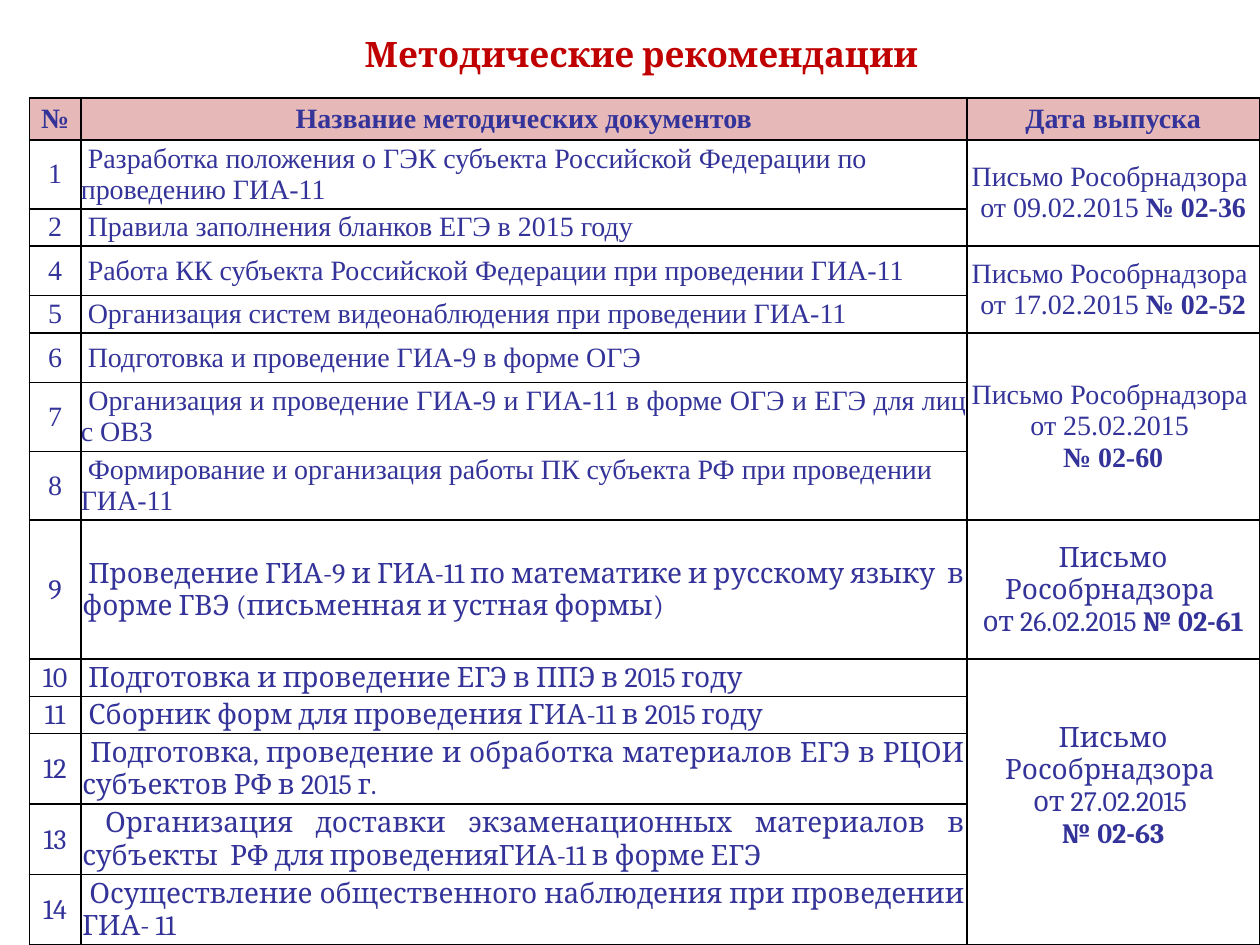
from dataclasses import dataclass

from lxml import etree
from pptx import Presentation
from pptx.dml.color import RGBColor
from pptx.enum.text import MSO_ANCHOR, MSO_AUTO_SIZE, PP_ALIGN
from pptx.oxml.ns import qn
from pptx.util import Cm, Pt

LEFT, CENTER, JUSTIFY = PP_ALIGN.LEFT, PP_ALIGN.CENTER, PP_ALIGN.JUSTIFY
MIDDLE = MSO_ANCHOR.MIDDLE
GROW = MSO_AUTO_SIZE.SHAPE_TO_FIT_TEXT
BLANK = 6


@dataclass(frozen=True)
class Theme:
    title_color: str = "C00000"
    text_color: str = "333399"
    header_fill: str = "E6B9B8"
    border: str = "000000"
    title_size: int = 20
    text_size: int = 16
    title_font: str = "Cambria"
    table_font: str = "Times New Roman"


def write(tf, text, *, font, size, color, bold=False, align=LEFT,
          line_spacing=None, space_after=None):
    """One paragraph per line; **marks** switch bold on and off."""
    for i, line in enumerate(text.split("\n")):
        p = tf.paragraphs[0] if i == 0 else tf.add_paragraph()
        p.alignment = align
        p.line_spacing = line_spacing
        p.space_after = space_after
        for j, part in enumerate(line.split("**")):
            if not part:
                continue
            r = p.add_run()
            r.text = part
            r.font.name, r.font.size = font, Pt(size)
            r.font.bold = bold or j % 2 == 1
            r.font.color.rgb = RGBColor.from_string(color)


def add_text_shadow(r):
    effects = etree.Element(qn("a:effectLst"))
    shadow = etree.SubElement(effects, qn("a:outerShdw"), blurRad="38100",
                              dist="38100", dir="2700000", algn="tl")
    color = etree.SubElement(shadow, qn("a:srgbClr"), val="000000")
    etree.SubElement(color, qn("a:alpha"), val="43000")
    r.font.fill._xPr.find(qn("a:solidFill")).addnext(effects)


def add_borders(cell, color):
    tc_pr = cell._tc.get_or_add_tcPr()
    for side in ("lnL", "lnR", "lnT", "lnB"):
        ln = etree.SubElement(tc_pr, qn(f"a:{side}"), w=str(Pt(1)))
        fill = etree.SubElement(ln, qn("a:solidFill"))
        etree.SubElement(fill, qn("a:srgbClr"), val=color)


class Deck:
    def __init__(self, prs, theme):
        self.theme = theme
        self.s = prs.slides.add_slide(prs.slide_layouts[BLANK])

    def title(self, text, x, y, w, h):
        t = self.theme
        sp = self.s.shapes.add_textbox(Cm(x), Cm(y), Cm(w), Cm(h))
        tf = sp.text_frame
        tf.word_wrap = True
        tf.auto_size = GROW
        write(tf, text, font=t.title_font, size=t.title_size, color=t.title_color,
              bold=True, align=CENTER, line_spacing=1.15, space_after=Pt(10))
        add_text_shadow(tf.paragraphs[0].runs[0])

    def table(self, x, y, widths, heights):
        frame = self.s.shapes.add_table(len(heights), len(widths), Cm(x), Cm(y),
                                        Cm(sum(widths)), Cm(sum(heights)))
        table = frame.table
        table.first_row = table.horz_banding = False
        for column, width in zip(table.columns, widths):
            column.width = Cm(width)
        for row, height in zip(table.rows, heights):
            row.height = Cm(height)
        for cell in table.iter_cells():
            add_borders(cell, self.theme.border)
            cell.fill.background()
        return table

    def cell(self, cell, text, *, font, inset=0, fill=None, bottom=0, **fmt):
        t = self.theme
        cell.vertical_anchor = MIDDLE
        cell.margin_left = cell.margin_right = cell.margin_top = Cm(inset)
        cell.margin_bottom = Cm(bottom)
        if fill:
            cell.fill.solid()
            cell.fill.fore_color.rgb = RGBColor.from_string(fill)
        write(cell.text_frame, text, font=font, size=t.text_size,
              color=t.text_color, **fmt)


HEADERS = ["№", "Название методических документов", "Дата выпуска"]
COLUMN_WIDTHS = [1.04, 17.86, 5.9]
HEADER_HEIGHT = 0.84
FIRST_CAMBRIA = 9  # documents from this number on are set in the title font

# number, name, alignment, row height
DOCUMENTS = [
    (1, "Разработка положения о ГЭК субъекта Российской Федерации по проведению ГИА-11", LEFT, 1.39),
    (2, "Правила заполнения бланков ЕГЭ в 2015 году", JUSTIFY, 0.75),
    (4, "Работа КК субъекта Российской Федерации при проведении ГИА-11", LEFT, 1),
    (5, "Организация систем видеонаблюдения при проведении ГИА-11", LEFT, 0.75),
    (6, "Подготовка и проведение ГИА-9 в форме ОГЭ", LEFT, 1),
    (7, "Организация и проведение ГИА-9 и ГИА-11 в форме ОГЭ и ЕГЭ для лиц с ОВЗ", JUSTIFY, 1.39),
    (8, "Формирование и организация работы ПК субъекта РФ при проведении ГИА-11", LEFT, 1.39),
    (9, "Проведение ГИА-9 и ГИА-11 по математике и русскому языку  в "
        "форме ГВЭ (письменная и устная формы)", LEFT, 2.8),
    (10, "Подготовка и проведение ЕГЭ в ППЭ в 2015 году", JUSTIFY, 0.75),
    (11, "Сборник форм для проведения ГИА-11 в 2015 году", JUSTIFY, 0.75),
    (12, "Подготовка, проведение и обработка материалов ЕГЭ в РЦОИ субъектов РФ в 2015 г.", JUSTIFY, 1.42),
    (13, "Организация доставки экзаменационных материалов в субъекты  РФ "
         "для проведенияГИА-11 в форме ЕГЭ", JUSTIFY, 1.42),
    (14, "Осуществление общественного наблюдения при проведении ГИА- 11", JUSTIFY, 1.42),
]

# rows covered, date and letter number, bottom inset
LETTERS = [
    (2, "от 09.02.2015 **№ 02-36**", 0),
    (2, "от 17.02.2015 **№ 02-52**", 0),
    (3, "от 25.02.2015 \n**№ 02-60**", 0),
    (1, "от 26.02.2015 **№ 02-61**", 0),
    (5, "от 27.02.2015 \n**№ 02-63**", 0.65),
]


def main():
    prs = Presentation()
    prs.slide_width, prs.slide_height = Cm(25.4), Cm(19.05)
    theme = Theme()
    deck = Deck(prs, theme)
    deck.title("Методические рекомендации", 1, 0.4, 23.85, 1.17)

    heights = [HEADER_HEIGHT] + [height for *_, height in DOCUMENTS]
    table = deck.table(0.59, 1.98, COLUMN_WIDTHS, heights)
    for col, header in enumerate(HEADERS):
        deck.cell(table.cell(0, col), header, font=theme.table_font,
                  fill=theme.header_fill, bold=True, align=CENTER)

    def row_style(number):
        if number >= FIRST_CAMBRIA:
            return {"font": theme.title_font, "inset": 0.03}
        return {"font": theme.table_font}

    for row, (number, name, align, _) in enumerate(DOCUMENTS, 1):
        style = row_style(number)
        deck.cell(table.cell(row, 0), str(number), align=CENTER, **style)
        deck.cell(table.cell(row, 1), f" {name}", align=align, **style)

    row = 1
    for span, letter, bottom in LETTERS:
        cell = table.cell(row, 2)
        if span > 1:
            cell.merge(table.cell(row + span - 1, 2))
        deck.cell(cell, f"Письмо Рособрнадзора \n{letter}", align=CENTER,
                  bottom=bottom, **row_style(DOCUMENTS[row - 1][0]))
        row += span

    prs.save("out.pptx")


if __name__ == "__main__":
    main()
